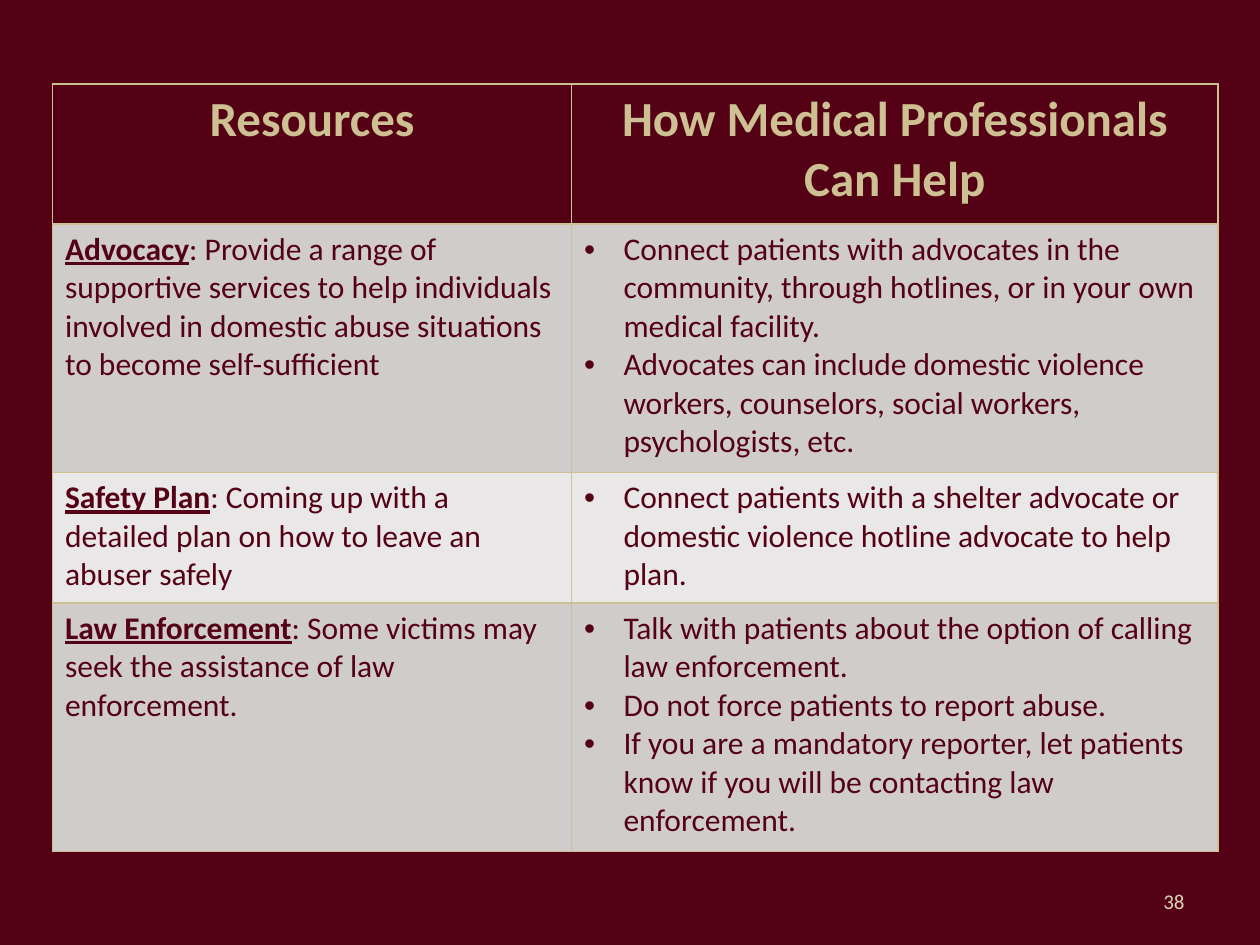
from lxml import etree
from pptx import Presentation
from pptx.dml.color import RGBColor
from pptx.enum.text import MSO_ANCHOR, PP_ALIGN
from pptx.oxml.ns import qn
from pptx.util import Pt

CENTER, RIGHT = PP_ALIGN.CENTER, PP_ALIGN.RIGHT
MIDDLE = MSO_ANCHOR.MIDDLE
FONT = "Calibri"
COLORS = {"wine": "540115", "gold": "CDC092", "gray": "D1CCCC", "pale": "E9E7E8", "sand": "DBD2B6"}
HEADS = ["Resources", "How Medical Professionals Can Help"]
ROWS = [
    ("Advocacy",
     ": Provide a range of supportive services to help individuals involved in domestic abuse situations to become self-sufficient",
     ["Connect patients with advocates in the community, through hotlines, or in your own medical facility.",
      "Advocates can include domestic violence workers, counselors, social workers, psychologists, etc."]),
    ("Safety Plan",
     ": Coming up with a detailed plan on how to leave an abuser safely",
     ["Connect patients with a shelter advocate or domestic violence hotline advocate to help plan."]),
    ("Law Enforcement",
     ": Some victims may seek the assistance of law enforcement.",
     ["Talk with patients about the option of calling law enforcement.",
      "Do not force patients to report abuse.",
      "If you are a mandatory reporter, let patients know if you will be contacting law enforcement."]),
]
WIDTHS = [296.6, 369.4]
HEIGHTS = [80, 142, 74.6, 142]


def rgb(name):
    return RGBColor.from_string(COLORS[name])


def style(para, size, color, bold=False):
    font = para.font
    font.name, font.size, font.bold = FONT, Pt(size), bold
    font.color.rgb = rgb(color)


def border(cell):
    props = cell._tc.get_or_add_tcPr()
    for i, side in enumerate(("lnL", "lnR", "lnT", "lnB")):
        line = etree.Element(qn("a:" + side), w=str(Pt(1)))
        fill = etree.SubElement(line, qn("a:solidFill"))
        etree.SubElement(fill, qn("a:srgbClr"), val=COLORS["gold"])
        props.insert(i, line)


def bullet(para):
    props = para._p.get_or_add_pPr()
    props.set("marL", str(Pt(22.5)))
    props.set("indent", str(-Pt(22.5)))
    mark = etree.Element(qn("a:buFont"), typeface="Arial")
    props.insert(0, mark)
    mark.addnext(etree.Element(qn("a:buChar"), char="•"))


def fill_term(cell, term, text):
    para = cell.text_frame.paragraphs[0]
    style(para, 18, "wine")
    run = para.add_run()
    run.text = term
    run.font.bold = run.font.underline = True
    para.add_run().text = text


def fill_list(cell, items):
    cell.text = "\n".join(items)
    for para in cell.text_frame.paragraphs:
        style(para, 18, "wine")
        bullet(para)


def add_grid(slide, left, top):
    frame = slide.shapes.add_table(len(HEIGHTS), len(WIDTHS), Pt(left), Pt(top),
                                   Pt(sum(WIDTHS)), Pt(sum(HEIGHTS)))
    table = frame.table
    for col, width in zip(table.columns, WIDTHS):
        col.width = Pt(width)
    for row, height, shade in zip(table.rows, HEIGHTS, ("wine", "gray", "pale", "gray")):
        row.height = Pt(height)
        for cell in row.cells:
            cell.fill.solid()
            cell.fill.fore_color.rgb = rgb(shade)
            border(cell)
    for i, head in enumerate(HEADS):
        cell = table.cell(0, i)
        cell.text = head
        para = cell.text_frame.paragraphs[0]
        para.alignment = CENTER
        style(para, 28, "gold", True)
    for i, (term, text, items) in enumerate(ROWS, 1):
        fill_term(table.cell(i, 0), term, text)
        fill_list(table.cell(i, 1), items)


def add_number(slide, left, top, width, height):
    box = slide.shapes.add_textbox(Pt(left), Pt(top), Pt(width), Pt(height))
    frame = box.text_frame
    frame.word_wrap = True
    frame.vertical_anchor = MIDDLE
    frame.text = "38"
    para = frame.paragraphs[0]
    para.alignment = RIGHT
    style(para, 12, "sand")


def main():
    deck = Presentation()
    deck.slide_width, deck.slide_height = Pt(720), Pt(540)
    slide = deck.slides.add_slide(deck.slide_layouts[6])
    back = slide.background.fill
    back.solid()
    back.fore_color.rgb = rgb("wine")
    add_grid(slide, 30, 48)
    add_number(slide, 516, 500.5, 168, 28.8)
    deck.save("out.pptx")


if __name__ == "__main__":
    main()
